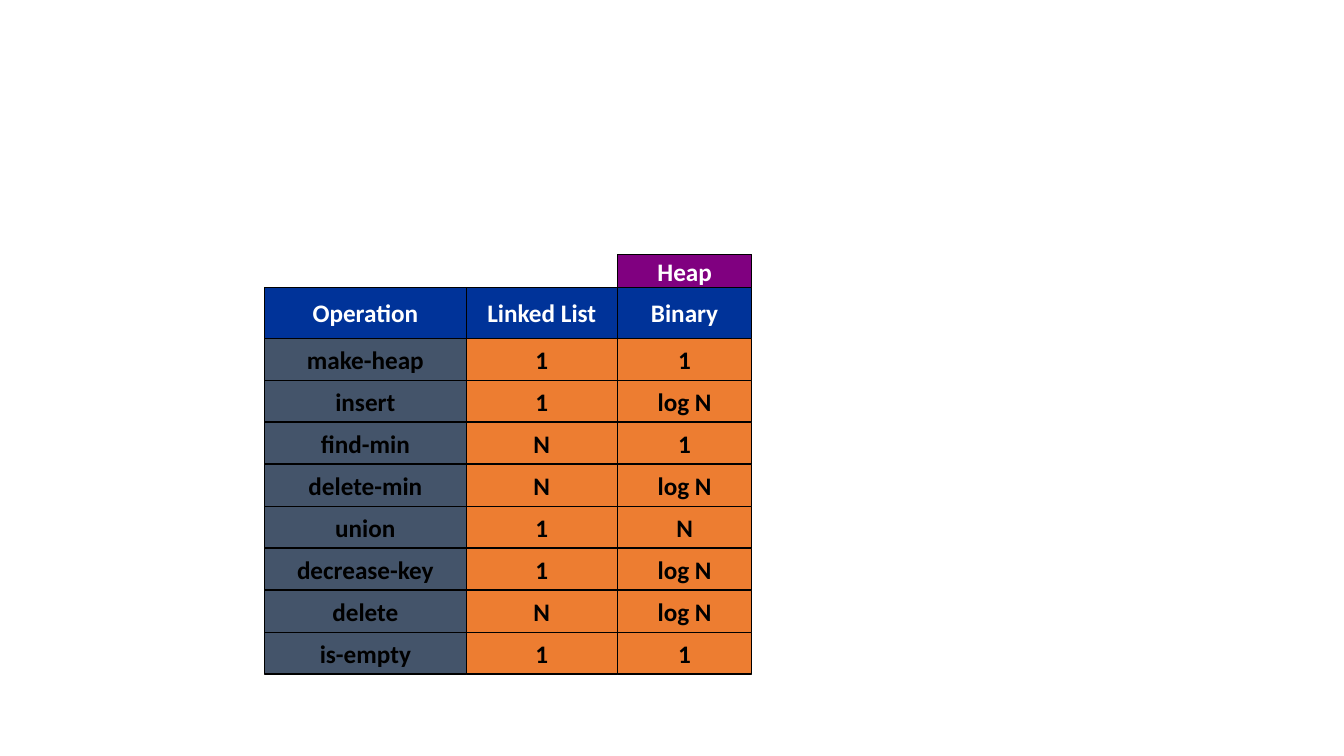
"""Build a slide comparing the running times of heap operations."""
from pptx import Presentation
from pptx import util as u
from pptx.dml import color
from pptx.enum import shapes, text

PX = 9525
LEFT, TOP = 252, 274
COLUMN_WIDTHS = (192, 144, 128)
HEADER_HEIGHT, ROW_HEIGHT, GROUP_HEIGHT = 48, 40, 32
BLACK, WHITE = "000000", "FFFFFF"
NAVY, SLATE, ORANGE, PURPLE = "003399", "44546A", "ED7D31", "800080"

HEADERS = ("Operation", "Linked List", "Binary")
RUNNING_TIMES = (
    ("make-heap", "1", "1"),
    ("insert", "1", "log N"),
    ("find-min", "N", "1"),
    ("delete-min", "N", "log N"),
    ("union", "1", "N"),
    ("decrease-key", "1", "log N"),
    ("delete", "N", "log N"),
    ("is-empty", "1", "1"),
)


def px(length):
    """Turn pixels into EMU."""
    return u.Emu(length * PX)


def rgb(value):
    """Turn a hex string into a colour."""
    return color.RGBColor.from_string(value)


def write(frame, words, *, size=18, font="Calibri", ink=BLACK, bold=True):
    """Put one centred line of formatted text in a frame."""
    frame.word_wrap = False
    frame.vertical_anchor = text.MSO_ANCHOR.MIDDLE
    para = frame.paragraphs[0]
    para.alignment = text.PP_ALIGN.CENTER
    span = para.add_run()
    span.text = words
    span.font.size = u.Pt(size)
    span.font.name = font
    span.font.bold = bold
    span.font.color.rgb = rgb(ink)


def add_cell(page, words, left, top, width, height, fill, ink=BLACK):
    """Add one outlined, filled rectangle with its label."""
    box = page.shapes.add_shape(
        shapes.MSO_SHAPE.RECTANGLE, px(left), px(top), px(width), px(height))
    box.shadow.inherit = False
    box.fill.solid()
    box.fill.fore_color.rgb = rgb(fill)
    box.line.color.rgb = rgb(BLACK)
    box.line.width = u.Pt(0.75)
    write(box.text_frame, words, ink=ink)


def add_row(page, labels, top, height, fills, ink=BLACK):
    """Add one row of cells across the columns."""
    left = LEFT
    for words, width, fill in zip(labels, COLUMN_WIDTHS, fills):
        add_cell(page, words, left, top, width, height, fill, ink)
        left += width


def main():
    """Build and save the deck."""
    deck = Presentation()
    deck.slide_width, deck.slide_height = px(1280), px(720)
    page = deck.slides.add_slide(deck.slide_layouts[6])

    add_row(page, HEADERS, TOP, HEADER_HEIGHT, (NAVY,) * 3, WHITE)
    for index, labels in enumerate(RUNNING_TIMES):
        top = TOP + HEADER_HEIGHT + index * ROW_HEIGHT
        add_row(page, labels, top, ROW_HEIGHT, (SLATE, ORANGE, ORANGE))

    add_cell(page, "Heap", LEFT + sum(COLUMN_WIDTHS[:2]), TOP - GROUP_HEIGHT,
             COLUMN_WIDTHS[2], GROUP_HEIGHT, PURPLE, WHITE)
    deck.save("out.pptx")


if __name__ == "__main__":
    main()
